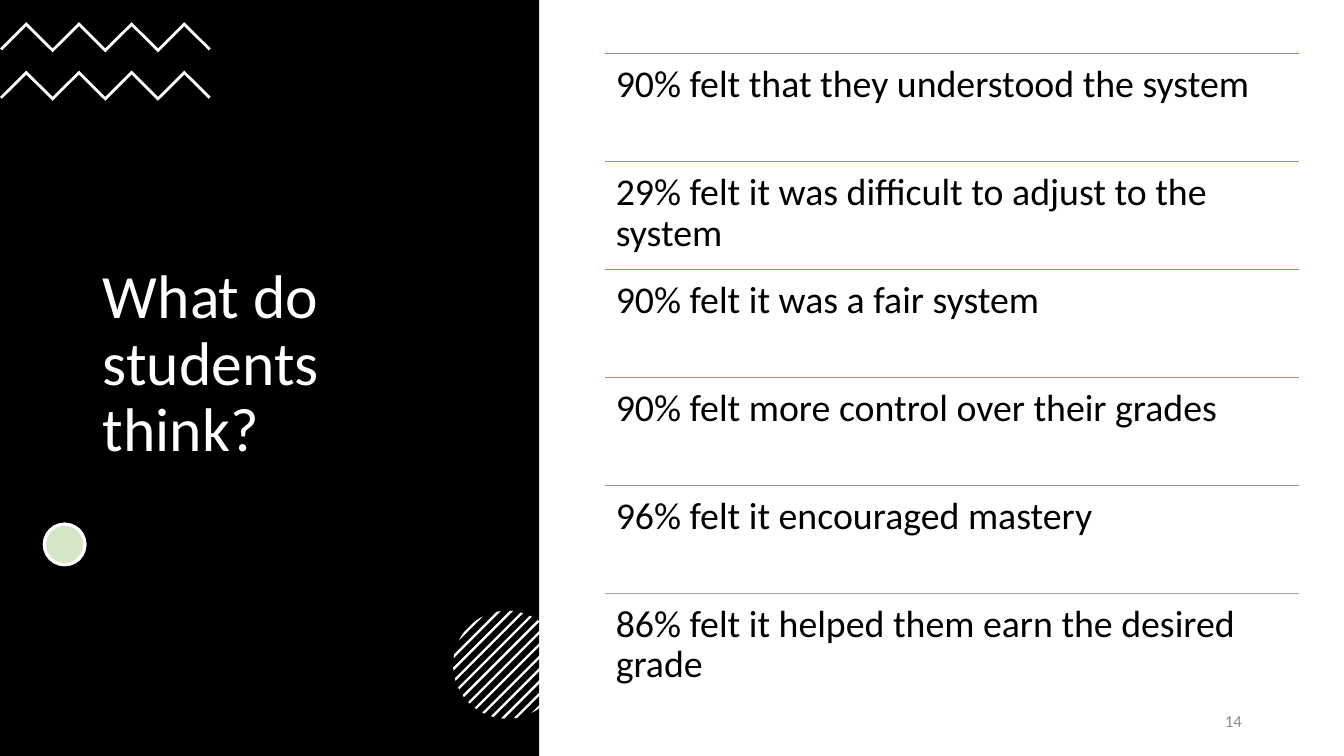
from dataclasses import dataclass
from math import acos, cos, pi, sin

from lxml.etree import SubElement
from pptx import Presentation
from pptx.dml.color import RGBColor as Rgb
from pptx.enum.shapes import MSO_CONNECTOR as Connector, MSO_SHAPE as Shape
from pptx.enum.text import MSO_ANCHOR as Anchor, MSO_AUTO_SIZE as AutoSize, PP_ALIGN as Align
from pptx.oxml.ns import qn
from pptx.util import Cm, Pt

TITLE = "What do students think?"
PAGE_NUMBER = "14"
FINDINGS = [
    ("90% felt that they understood the system", "ED7D31"),
    ("29% felt it was difficult to adjust to the system", "DC7A4B"),
    ("90% felt it was a fair system", "CC7D64"),
    ("90% felt more control over their grades", "BD867B"),
    ("96% felt it encouraged mastery", "B09391"),
    ("86% felt it helped them earn the desired grade", "A5A5A5"),
]


@dataclass(frozen=True)
class Theme:
    font: str = "Calibri"
    black: str = "000000"
    white: str = "FFFFFF"
    green: str = "70AD47"
    grey: str = "8C8C8C"
    title_size: float = 44
    finding_size: float = 27
    number_size: float = 12
    rule_width: float = 1
    dot_outline: float = 2.25


THEME = Theme()

# Lengths in centimetres
SLIDE_WIDTH, SLIDE_HEIGHT = 33.87, 19.05
PANEL_WIDTH = 13.59
ROW_LEFT, ROW_TOP, ROW_WIDTH, ROW_HEIGHT = 15.24, 1.35, 17.5, 2.72
ROW_INSET = 0.28
ZIGZAG_TOPS = (0.56, 1.78)
ZIGZAG_WIDTH, ZIGZAG_RISE, ZIGZAG_THICKNESS, ZIGZAG_STEPS = 5.31, 0.66, 0.1, 8
DISC_X, DISC_Y, DISC_RADIUS = 12.78, 16.75, 1.36
STRIPE_COUNT, STRIPE_PITCH, STRIPE_THICKNESS = 13, 0.22, 0.06
ARC_STEPS = 6


def paint(shape, color):
    shape.shadow.inherit = False
    shape.fill.solid()
    shape.fill.fore_color.rgb = Rgb.from_string(color)
    shape.line.fill.background()


def write(frame, text, size, color, align=Align.LEFT, spacing=1.0):
    frame.word_wrap = True
    frame.auto_size = AutoSize.NONE
    frame.text = text
    para = frame.paragraphs[0]
    para.alignment = align
    para.line_spacing = spacing
    for span in para.runs:
        span.font.name = THEME.font
        span.font.size = Pt(size)
        span.font.color.rgb = Rgb.from_string(color)


def add_outline(shapes, points):
    """Draw a filled white polygon through points given in centimetres."""
    corners = [(Cm(x), Cm(y)) for x, y in points]
    builder = shapes.build_freeform(*corners[0])
    builder.add_line_segments(corners[1:], close=True)
    paint(builder.convert_to_shape(), THEME.white)


def zigzag_points(top):
    step = ZIGZAG_WIDTH / ZIGZAG_STEPS
    upper = [(i * step, top + (0 if i % 2 else ZIGZAG_RISE)) for i in range(ZIGZAG_STEPS + 1)]
    lower = [(x, y + ZIGZAG_THICKNESS) for x, y in reversed(upper)]
    half = ZIGZAG_THICKNESS / 2
    lower[0] = (lower[0][0] - half, lower[0][1] - half)
    lower[-1] = (half, lower[-1][1] - half)
    return upper + lower


def stripe_points(offset):
    """Outline the band of the disc lying at an offset along its diagonal."""
    start, end = [
        acos(max(-1, min(1, (offset + side * STRIPE_THICKNESS / 2) / DISC_RADIUS)))
        for side in (-1, 1)
    ]
    arc = [start + (end - start) * i / ARC_STEPS for i in range(ARC_STEPS + 1)]
    angles = [pi / 4 + a for a in arc] + [pi / 4 - a for a in reversed(arc)]
    return [(DISC_X + DISC_RADIUS * cos(a), DISC_Y + DISC_RADIUS * sin(a)) for a in angles]


def add_panel(page):
    panel = page.shapes.add_shape(Shape.RECTANGLE, 0, 0, Cm(PANEL_WIDTH), Cm(SLIDE_HEIGHT))
    paint(panel, THEME.black)
    page.shapes.title.element.addprevious(panel.element)


def add_title(page):
    title = page.shapes.title
    title.left, title.top, title.width, title.height = Cm(2.34), Cm(3.33), Cm(8.89), Cm(11.76)
    write(title.text_frame, TITLE, THEME.title_size, THEME.white, spacing=0.9)
    title.text_frame.vertical_anchor = Anchor.MIDDLE


def add_decoration(page):
    zigzags = page.shapes.add_group_shape()
    for top in ZIGZAG_TOPS:
        add_outline(zigzags.shapes, zigzag_points(top))

    for color in (THEME.white, THEME.green):
        dot = page.shapes.add_shape(Shape.OVAL, Cm(1.12), Cm(13.21), Cm(1.02), Cm(1.02))
        paint(dot, color)
        dot.line.color.rgb = Rgb.from_string(THEME.white)
        dot.line.width = Pt(THEME.dot_outline)
    tint = dot.element.spPr.find(qn("a:solidFill")).find(qn("a:srgbClr"))
    SubElement(tint, qn("a:alpha")).set("val", "30000")

    disc = page.shapes.add_group_shape()
    for i in range(STRIPE_COUNT):
        add_outline(disc.shapes, stripe_points((i - STRIPE_COUNT // 2) * STRIPE_PITCH))


def add_findings(page):
    group = page.shapes.add_group_shape()
    for i, (text, color) in enumerate(FINDINGS):
        top = Cm(ROW_TOP + i * ROW_HEIGHT)
        rule = group.shapes.add_connector(
            Connector.STRAIGHT, Cm(ROW_LEFT), top, Cm(ROW_LEFT + ROW_WIDTH), top)
        rule.line.color.rgb = Rgb.from_string(color)
        rule.line.width = Pt(THEME.rule_width)
        SubElement(rule.element.spPr, qn("a:effectLst"))

        box = group.shapes.add_textbox(Cm(ROW_LEFT), top, Cm(ROW_WIDTH), Cm(ROW_HEIGHT))
        frame = box.text_frame
        frame.margin_left = frame.margin_right = Cm(ROW_INSET)
        frame.margin_top = frame.margin_bottom = Cm(ROW_INSET)
        write(frame, text, THEME.finding_size, THEME.black, spacing=0.9)


def add_page_number(page):
    box = page.shapes.add_textbox(Cm(23.93), Cm(17.65), Cm(7.62), Cm(1.02))
    write(box.text_frame, PAGE_NUMBER, THEME.number_size, THEME.grey, Align.RIGHT)
    box.text_frame.vertical_anchor = Anchor.MIDDLE


def main():
    deck = Presentation()
    deck.slide_width, deck.slide_height = Cm(SLIDE_WIDTH), Cm(SLIDE_HEIGHT)
    page = deck.slides.add_slide(deck.slide_layouts.get_by_name("Title Only"))
    add_panel(page)
    add_title(page)
    add_decoration(page)
    add_findings(page)
    add_page_number(page)
    deck.save("out.pptx")


if __name__ == "__main__":
    main()
